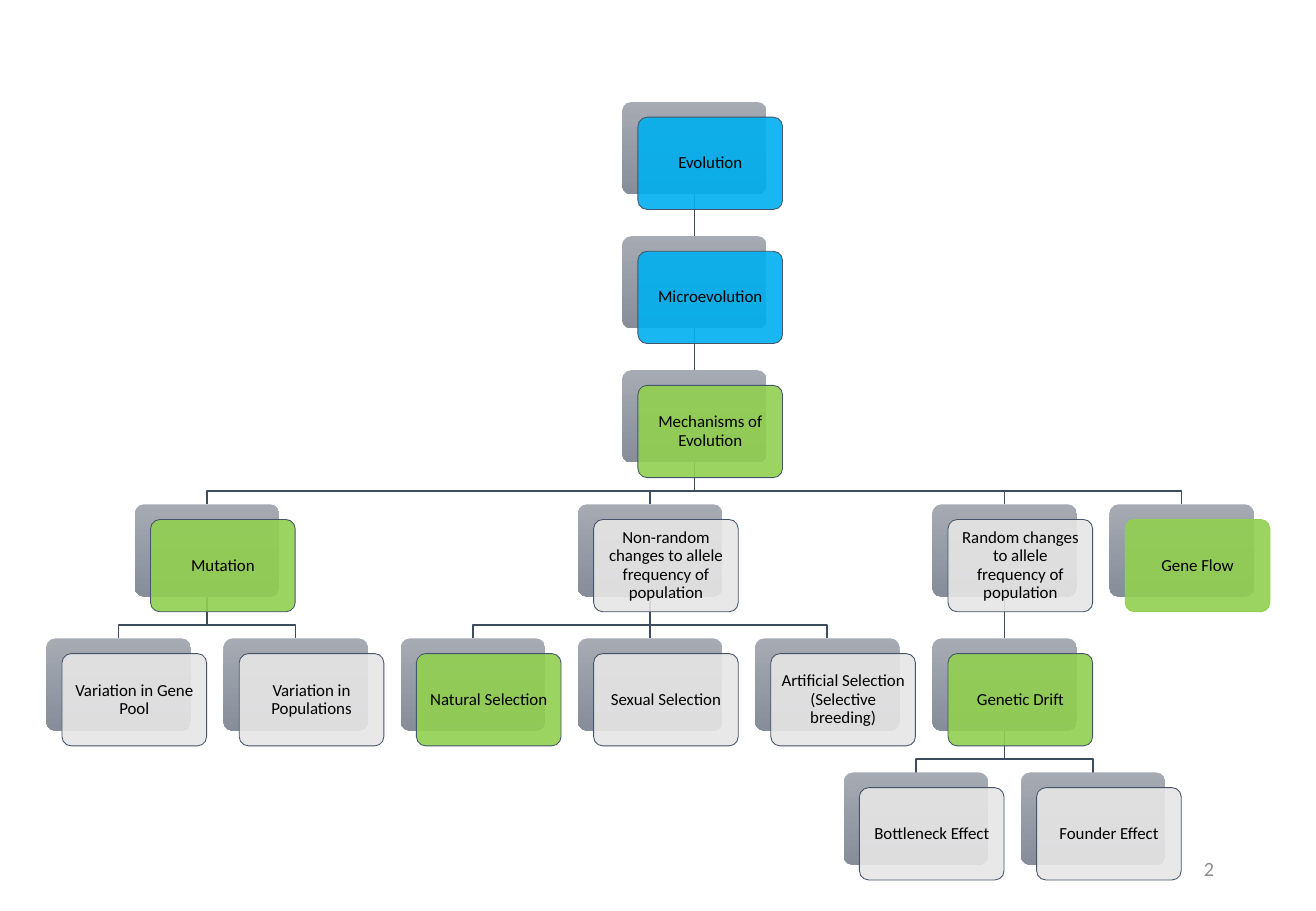
from dataclasses import dataclass

from lxml import etree
from pptx import Presentation
from pptx.dml.color import RGBColor
from pptx.enum.shapes import MSO_CONNECTOR, MSO_SHAPE
from pptx.enum.text import MSO_ANCHOR, PP_ALIGN
from pptx.oxml.ns import qn
from pptx.util import Inches, Pt

ROUNDED = MSO_SHAPE.ROUNDED_RECTANGLE
STRAIGHT = MSO_CONNECTOR.STRAIGHT
MIDDLE = MSO_ANCHOR.MIDDLE
CENTER, RIGHT = PP_ALIGN.CENTER, PP_ALIGN.RIGHT


@dataclass(frozen=True)
class Theme:
    font: str = "Calibri"
    label_size: int = 10
    number_size: int = 12
    text: str = "000000"
    number: str = "8C8C8C"
    branch: str = "3E4C60"
    border: str = "44546A"
    back_top: str = "A5AAB3"
    back_bottom: str = "878E9A"
    blue: str = "00B0F0"
    green: str = "92D050"
    gray: str = "E7E6E6"


theme = Theme()

# Tree geometry, in inches
LEFT, TOP = 0.38, 0.84
COLUMN_STEP, ROW_STEP = 8.75 / 6, 5.52 / 5
CARD_WIDTH, CARD_HEIGHT = 1.19, 0.76
FRONT_SHIFT_X, FRONT_SHIFT_Y = 0.13, 0.125
BRANCH_DROP = 0.11

# Label: (parent, column, row, fill)
concepts = {
    "Evolution": (None, 3.25, 0, theme.blue),
    "Microevolution": ("Evolution", 3.25, 1, theme.blue),
    "Mechanisms of Evolution": ("Microevolution", 3.25, 2, theme.green),
    "Mutation": ("Mechanisms of Evolution", 0.5, 3, theme.green),
    "Variation in Gene Pool": ("Mutation", 0, 4, theme.gray),
    "Variation in Populations": ("Mutation", 1, 4, theme.gray),
    "Non-random changes to allele frequency of population":
        ("Mechanisms of Evolution", 3, 3, theme.gray),
    "Natural Selection":
        ("Non-random changes to allele frequency of population", 2, 4, theme.green),
    "Sexual Selection":
        ("Non-random changes to allele frequency of population", 3, 4, theme.gray),
    "Artificial Selection (Selective breeding)":
        ("Non-random changes to allele frequency of population", 4, 4, theme.gray),
    "Random changes to allele frequency of population":
        ("Mechanisms of Evolution", 5, 3, theme.gray),
    "Genetic Drift":
        ("Random changes to allele frequency of population", 5, 4, theme.green),
    "Bottleneck Effect": ("Genetic Drift", 4.5, 5, theme.gray),
    "Founder Effect": ("Genetic Drift", 5.5, 5, theme.gray),
    "Gene Flow": ("Mechanisms of Evolution", 6, 3, theme.green),
}


def corner(label):
    parent, column, row, fill = concepts[label]
    return LEFT + column * COLUMN_STEP, TOP + row * ROW_STEP


def write(shape, text, size, color, alignment):
    frame = shape.text_frame
    frame.word_wrap = True
    frame.vertical_anchor = MIDDLE
    para = frame.paragraphs[0]
    para.text = text
    para.alignment = alignment
    para.font.name = theme.font
    para.font.size = Pt(size)
    para.font.color.rgb = RGBColor.from_string(color)
    return frame, para


deck = Presentation()
deck.slide_width, deck.slide_height = Inches(10.83), Inches(7.5)
page = deck.slides.add_slide(deck.slide_layouts[6])

# Slide number
number_box = page.shapes.add_textbox(Inches(7.65), Inches(6.95), Inches(2.44), Inches(0.4))
write(number_box, "2", theme.number_size, theme.number, RIGHT)

# Branches from each parent to its children
for label, (parent, column, row, fill) in concepts.items():
    if parent is None:
        continue
    child_left, child_top = corner(label)
    parent_left, parent_top = corner(parent)
    start_x = Inches(parent_left + CARD_WIDTH / 2)
    start_y = Inches(parent_top + CARD_HEIGHT)
    end_x, end_y = Inches(child_left + CARD_WIDTH / 2), Inches(child_top)
    if start_x == end_x:
        branch = page.shapes.add_connector(STRAIGHT, start_x, start_y, end_x, end_y)
    else:
        bend_y = end_y - Inches(BRANCH_DROP)
        builder = page.shapes.build_freeform(start_x, start_y)
        builder.add_line_segments(
            [(start_x, bend_y), (end_x, bend_y), (end_x, end_y)], close=False)
        branch = builder.convert_to_shape()
        branch.fill.background()
    branch.line.color.rgb = RGBColor.from_string(theme.branch)
    branch.line.width = Pt(1)
    etree.SubElement(branch.element.spPr, qn("a:effectLst"))

# Cards: a shaded back and a translucent labelled front
for label, (parent, column, row, fill) in concepts.items():
    left, top = corner(label)
    back, front = [
        page.shapes.add_shape(ROUNDED, Inches(left + shift_x), Inches(top + shift_y),
                              Inches(CARD_WIDTH), Inches(CARD_HEIGHT))
        for shift_x, shift_y in ((0, 0), (FRONT_SHIFT_X, FRONT_SHIFT_Y))
    ]
    for card in (back, front):
        card.adjustments[0] = 0.1
        card.shadow.inherit = False

    back.fill.gradient()
    back.fill.gradient_angle = 270
    for stop, color in zip(back.fill.gradient_stops, (theme.back_top, theme.back_bottom)):
        stop.color.rgb = RGBColor.from_string(color)
    back.line.fill.background()

    front.fill.solid()
    front.fill.fore_color.rgb = RGBColor.from_string(fill)
    tint = front.element.spPr.find(qn("a:solidFill")).find(qn("a:srgbClr"))
    etree.SubElement(tint, qn("a:alpha"), val="90000")
    border = fill if label == "Gene Flow" else theme.border
    front.line.color.rgb = RGBColor.from_string(border)
    front.line.width = Pt(0.5)
    frame, para = write(front, label, theme.label_size, theme.text, CENTER)
    para.line_spacing = 0.9
    frame.margin_left = frame.margin_right = Inches(0.06)
    frame.margin_top = frame.margin_bottom = Inches(0.06)

deck.save("out.pptx")
